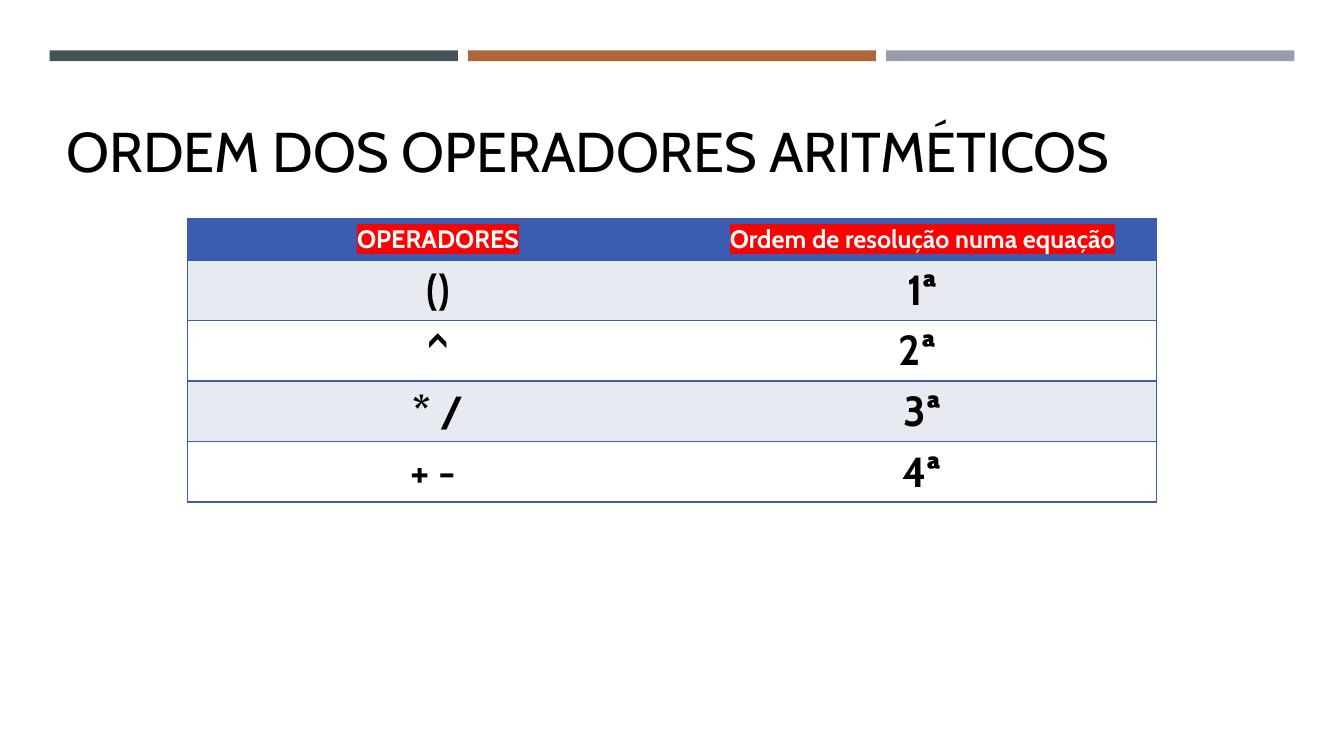
from lxml import etree
from pptx import Presentation
from pptx.dml.color import RGBColor
from pptx.enum.shapes import MSO_SHAPE
from pptx.enum.text import MSO_ANCHOR, PP_ALIGN
from pptx.oxml import parse_xml
from pptx.util import Cm, Pt

RECTANGLE = MSO_SHAPE.RECTANGLE
CENTER = PP_ALIGN.CENTER
TOP = MSO_ANCHOR.TOP
DRAWING = 'xmlns:a="http://schemas.openxmlformats.org/drawingml/2006/main"'
BLUE = "3B5DB1"
SHADOW = (f'<a:effectLst {DRAWING}><a:outerShdw blurRad="50800" dist="38100" '
          'dir="18900000" algn="bl" rotWithShape="0"><a:srgbClr val="000000">'
          '<a:alpha val="40000"/></a:srgbClr></a:outerShdw></a:effectLst>')
HIGHLIGHT = f'<a:highlight {DRAWING}><a:srgbClr val="FF0000"/></a:highlight>'


def color(value):
    return RGBColor.from_string(value)


def write(frame, text, size, ink="000000", bold=False, effect=None):
    para = frame.paragraphs[0]
    para.alignment = CENTER
    span = para.add_run()
    span.text = text
    span.font.size = Pt(size)
    span.font.bold = bold
    span.font.color.rgb = color(ink)
    if effect:
        span.font._element.append(parse_xml(effect))
    span.font.name = "Cabin"


deck = Presentation()
deck.slide_width, deck.slide_height = Cm(33.87), Cm(19.05)
page = deck.slides.add_slide(deck.slide_layouts[6])

# Bars across the top
for index, fill in enumerate(["465359", "B1653B", "969FA7"]):
    bar = page.shapes.add_shape(
        RECTANGLE, Cm(1.25 + 10.54 * index), Cm(1.27), Cm(10.29), Cm(0.27))
    bar.shadow.inherit = False
    bar.fill.solid()
    bar.fill.fore_color.rgb = color(fill)
    bar.line.fill.background()

# Title
title = page.shapes.add_textbox(Cm(1.25), Cm(2.8), Cm(27.15), Cm(1.95))
title.text_frame.word_wrap = False
write(title.text_frame, "ORDEM DOS OPERADORES ARITMÉTICOS", 40, effect=SHADOW)

# Table of operators
rows = [
    ("OPERADORES", "Ordem de resolução numa equação"),
    ("()", "1ª"),
    ("^", "2ª "),
    ("* /", "3ª"),
    ("+ - ", "4ª"),
]
table = page.shapes.add_table(
    len(rows), 2, Cm(4.73), Cm(5.51), Cm(24.41), Cm(7.12)).table
table.first_row = table.horz_banding = False
table.columns[0].width, table.columns[1].width = Cm(12.62), Cm(11.79)

for row_index, row in enumerate(rows):
    header = row_index == 0
    table.rows[row_index].height = Cm(1.04 if header else 1.52)
    for column_index, text in enumerate(row):
        cell = table.cell(row_index, column_index)
        cell.vertical_anchor = TOP
        cell.fill.solid()
        if header:
            cell.fill.fore_color.rgb = color(BLUE)
            write(cell.text_frame, text, 18, "FFFFFF", True, HIGHLIGHT)
        else:
            cell.fill.fore_color.rgb = color("E8EAF2" if row_index % 2 else "FFFFFF")
            write(cell.text_frame, text, 30, bold=True)

        # Blue borders, except between the two columns
        inner = "R" if column_index == 0 else "L"
        properties = cell._tc.get_or_add_tcPr()
        for position, side in enumerate("LRTB"):
            paint = ("<a:noFill/>" if side == inner else
                     f'<a:solidFill><a:srgbClr val="{BLUE}"/></a:solidFill>')
            border = etree.fromstring(f'<a:ln{side} {DRAWING} w="12700">{paint}</a:ln{side}>')
            properties.insert(position, border)

deck.save("out.pptx")
